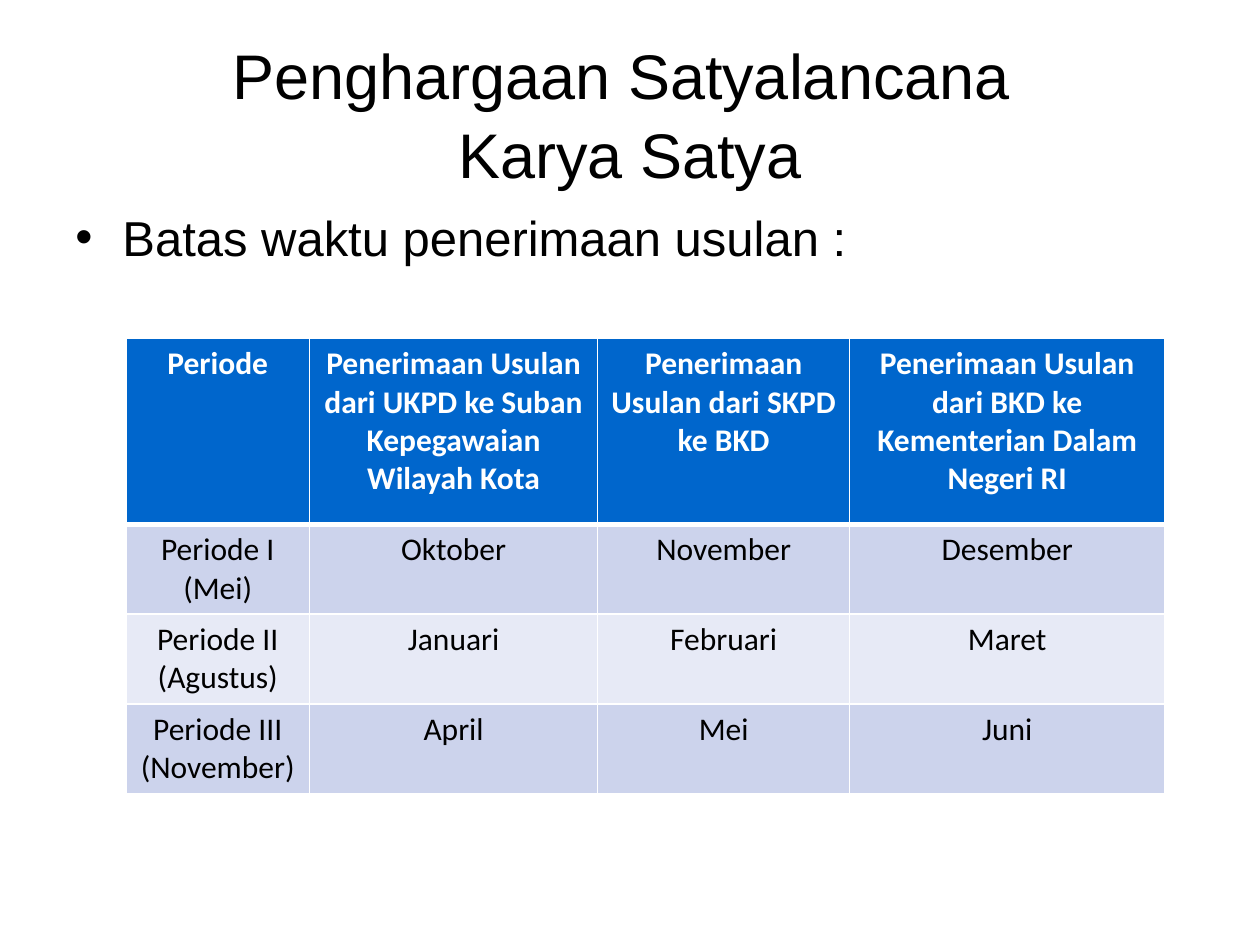
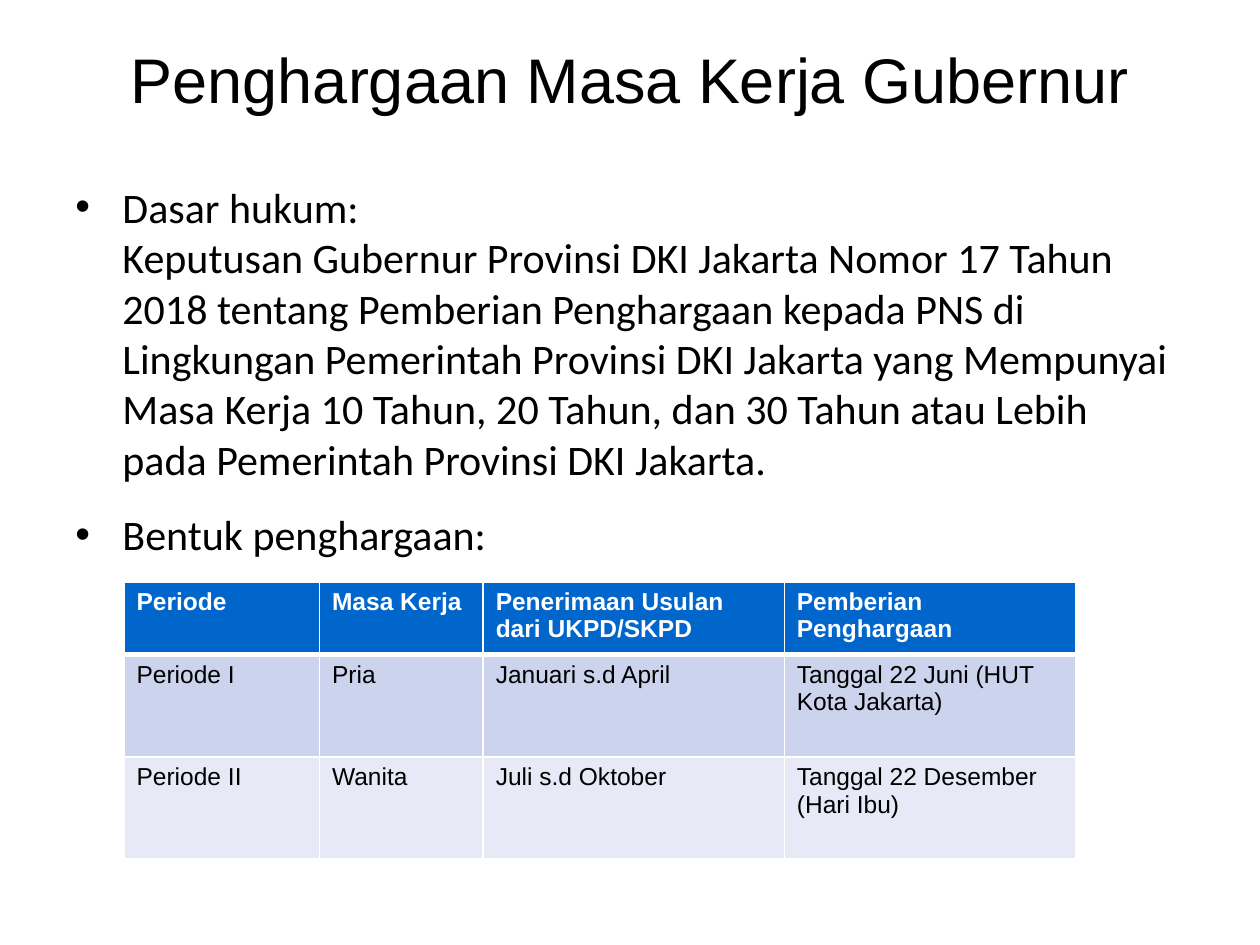
from lxml import etree
from pptx import Presentation
from pptx.dml.color import RGBColor
from pptx.enum.text import MSO_ANCHOR, PP_ALIGN
from pptx.oxml.ns import qn
from pptx.util import Cm, Pt

CENTER, LEFT = PP_ALIGN.CENTER, PP_ALIGN.LEFT
TOP, MIDDLE = MSO_ANCHOR.TOP, MSO_ANCHOR.MIDDLE
BLACK = RGBColor(0x00, 0x00, 0x00)
WHITE = RGBColor(0xFF, 0xFF, 0xFF)
BLUE = RGBColor(0x00, 0x66, 0xCC)
BANDS = RGBColor(0xCC, 0xD3, 0xEC), RGBColor(0xE7, 0xEA, 0xF6)
INDENT = Cm(0.95)
EDGE = 1.27  # left edge of titles and text, cm

# Content: boxes are left, top, width, height in cm; text items are (bullet, text)
SLIDES = [
    {
        "title": ("Penghargaan Satyalancana \nKarya Satya", (EDGE, 0.84, 22.86, 2.84)),
        "font": ("Arial", 28),
        "texts": [
            ((EDGE, 4.06, 22.86, 2), [(True, "Batas waktu penerimaan usulan :")]),
        ],
        "table": {
            "at": (2.54, 6.82),
            "cols": (3.7, 5.81, 5.08, 6.35),
            "rows": (3.75, 1.81, 1.81, 1.81),
            "font": ("Calibri", 18),
            "align": CENTER,
            "cells": [
                ("Periode",
                 "Penerimaan Usulan dari UKPD ke Suban Kepegawaian Wilayah Kota",
                 "Penerimaan Usulan dari SKPD ke BKD",
                 "Penerimaan Usulan dari BKD ke Kementerian Dalam Negeri RI"),
                ("Periode I (Mei)", "Oktober", "November", "Desember"),
                ("Periode II (Agustus)", "Januari", "Februari", "Maret"),
                ("Periode III (November)", "April", "Mei", "Juni"),
            ],
        },
    },
    {
        "title": ("Penghargaan Masa Kerja Gubernur", (EDGE, 0.53, 22.86, 2.03)),
        "font": ("Calibri", 24),
        "texts": [
            ((EDGE, 3.53, 22.66, 6.6), [
                (True, "Dasar hukum:"),
                (False, "Keputusan Gubernur Provinsi DKI Jakarta Nomor 17 Tahun 2018 "
                        "tentang Pemberian Penghargaan kepada PNS di Lingkungan "
                        "Pemerintah Provinsi DKI Jakarta yang Mempunyai Masa Kerja "
                        "10 Tahun, 20 Tahun, dan 30 Tahun atau Lebih pada "
                        "Pemerintah Provinsi DKI Jakarta."),
            ]),
            ((EDGE, 10.13, 22.43, 1.4), [(True, "Bentuk penghargaan:")]),
        ],
        "table": {
            "at": (2.5, 11.73),
            "cols": (3.94, 3.3, 6.07, 5.87),
            "rows": (1.47, 2.06, 2.06),
            "font": ("Arial", 14),
            "align": LEFT,
            "cells": [
                ("Periode", "Masa Kerja", "Penerimaan Usulan dari UKPD/SKPD",
                 "Pemberian Penghargaan"),
                ("Periode I", "Pria", "Januari s.d April",
                 "Tanggal 22 Juni (HUT Kota Jakarta)"),
                ("Periode II", "Wanita", "Juli s.d Oktober",
                 "Tanggal 22 Desember (Hari Ibu)"),
            ],
        },
    },
]


def write(para, text, font, color=BLACK, bold=False):
    for i, line in enumerate(text.split("\n")):
        if i:
            para.add_line_break()
        run = para.add_run()
        run.text = line
        run.font.name, run.font.size = font[0], Pt(font[1])
        run.font.color.rgb, run.font.bold = color, bold


def add_box(slide, box, anchor=TOP):
    frame = slide.shapes.add_textbox(*map(Cm, box)).text_frame
    frame.word_wrap = True
    frame.vertical_anchor = anchor
    return frame


def add_title(slide, text, box):
    para = add_box(slide, box, MIDDLE).paragraphs[0]
    para.alignment = CENTER
    para.line_spacing = 1.05
    write(para, text, ("Arial", 36))


def add_list(slide, box, items, font):
    frame = add_box(slide, box)
    for i, (mark, text) in enumerate(items):
        para = frame.add_paragraph() if i else frame.paragraphs[0]
        props = para._p.get_or_add_pPr()
        props.set("marL", str(INDENT))
        if mark:
            props.set("indent", str(-INDENT))
            etree.SubElement(props, qn("a:buFont")).set("typeface", "Arial")
            etree.SubElement(props, qn("a:buChar")).set("char", "•")
        write(para, text, font)


def set_edges(cell, row):
    # A thick rule parts the header from the body
    widths = {"L": 1, "R": 1, "T": 3 if row == 1 else 1, "B": 3 if row == 0 else 1}
    props = cell._tc.get_or_add_tcPr()
    for side, width in widths.items():
        line = etree.SubElement(props, qn("a:ln" + side), w=str(Pt(width)))
        fill = etree.SubElement(line, qn("a:solidFill"))
        etree.SubElement(fill, qn("a:srgbClr")).set("val", str(WHITE))


def add_grid(slide, at, cols, rows, font, align, cells):
    size = sum(cols), sum(rows)
    grid = slide.shapes.add_table(len(rows), len(cols), *map(Cm, at + size)).table
    for part, width in zip(grid.columns, cols):
        part.width = Cm(width)
    for part, height in zip(grid.rows, rows):
        part.height = Cm(height)
    for r, texts in enumerate(cells):
        head = r == 0
        for c, text in enumerate(texts):
            cell = grid.cell(r, c)
            set_edges(cell, r)
            cell.fill.solid()
            cell.fill.fore_color.rgb = BLUE if head else BANDS[(r - 1) % 2]
            para = cell.text_frame.paragraphs[0]
            para.alignment = align
            write(para, text, font, WHITE if head else BLACK, head)


def main():
    deck = Presentation()
    deck.slide_width, deck.slide_height = Cm(25.4), Cm(19.05)
    for data in SLIDES:
        slide = deck.slides.add_slide(deck.slide_layouts[6])
        add_title(slide, *data["title"])
        for box, items in data["texts"]:
            add_list(slide, box, items, data["font"])
        add_grid(slide, **data["table"])
    deck.save("out.pptx")


if __name__ == "__main__":
    main()
